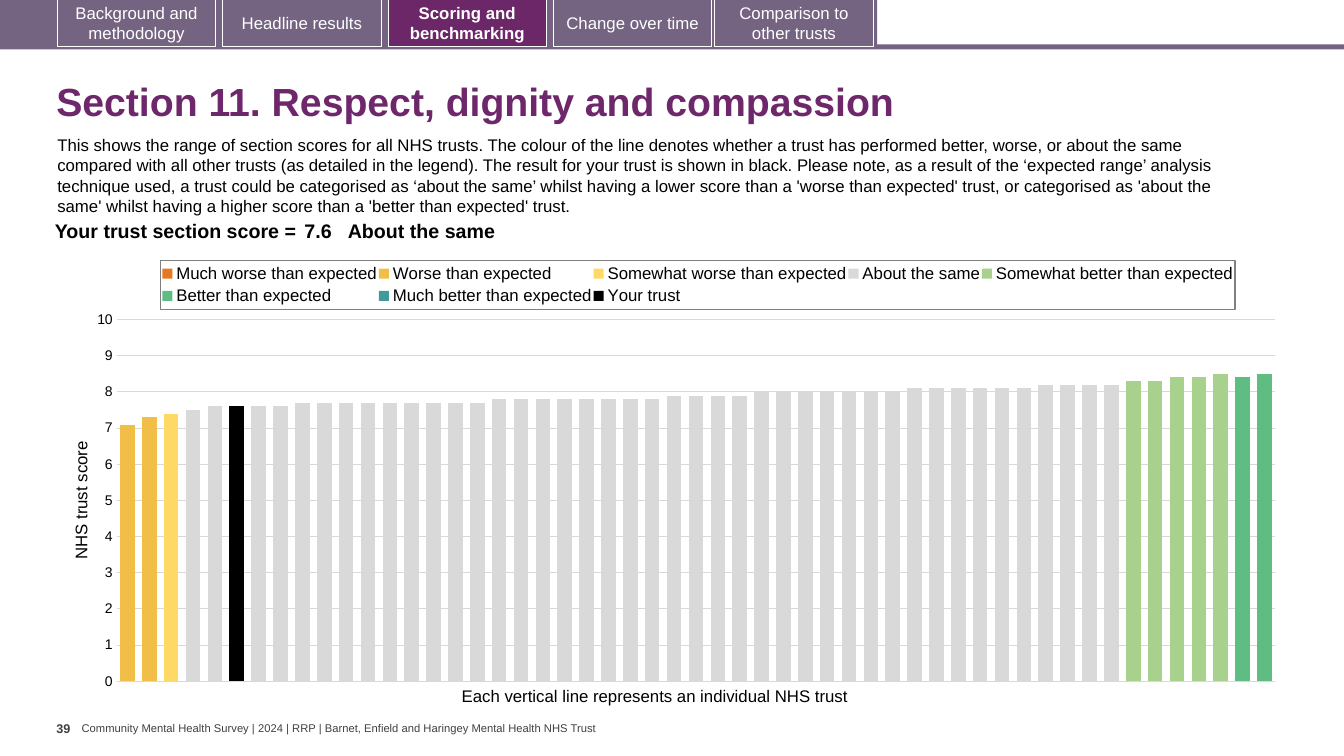
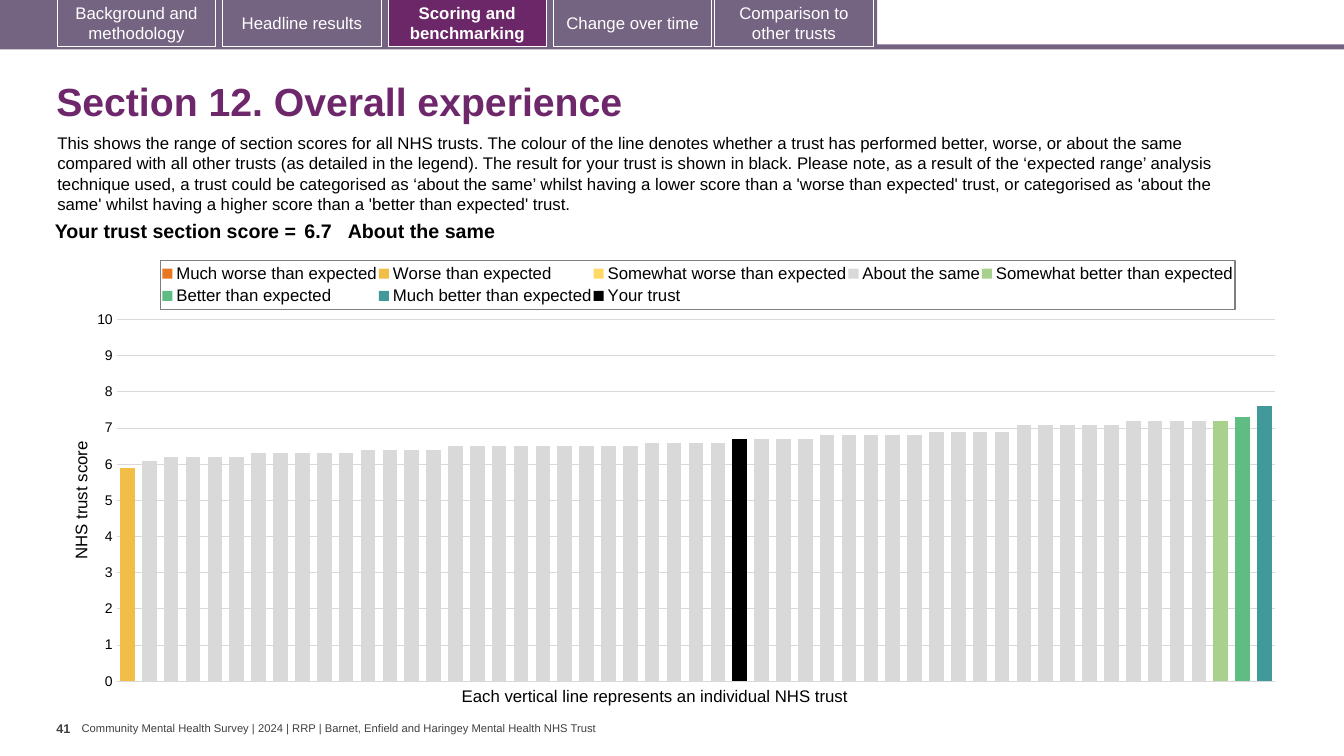
"""Build two section score slides, each with a bar chart of all trusts."""
import copy

import lxml.etree
import pptx
import pptx.chart.data
import pptx.dml.color
import pptx.enum.chart
import pptx.enum.shapes
import pptx.enum.text
import pptx.oxml
import pptx.oxml.ns
import pptx.util

Inches, Pt, qn = pptx.util.Inches, pptx.util.Pt, pptx.oxml.ns.qn
RGB = pptx.dml.color.RGBColor.from_string
XL = pptx.enum.chart
ALIGN, ANCHOR = pptx.enum.text.PP_ALIGN, pptx.enum.text.MSO_ANCHOR
RECT = pptx.enum.shapes.MSO_SHAPE.RECTANGLE

COLORS = {"band": "756382", "active": "6B2768", "title": "6D276A", "white": "FFFFFF",
          "black": "000000", "footer": "404040", "grid": "D9D9D9", "border": "7F7F7F"}
BANDS = {"Much worse than expected": "E87722", "Worse than expected": "F1BE48",
         "Somewhat worse than expected": "FFD966", "About the same": "D9D9D9",
         "Somewhat better than expected": "A9D18E", "Better than expected": "5FBD83",
         "Much better than expected": "419999"}
OWN = "Your trust"

TITLE = {"size": Pt(28), "bold": True, "color": "title"}
BODY = {"size": Pt(12), "bold": False, "color": "black"}
SCORE = {"size": Pt(14), "bold": True, "color": "black"}
TICKS = {"size": Pt(10), "bold": False, "color": "black"}
PAGE = {"size": Pt(9), "bold": True, "color": "footer"}
FOOTER = {"size": Pt(8), "bold": False, "color": "footer"}
TAB = {"size": Pt(12), "bold": False, "color": "white"}

TABS = [(0.57, "Background and methodology"), (2.21, "Headline results"),
        (3.85, "Scoring and benchmarking"), (5.49, "Change over time"),
        (7.09, "Comparison to other trusts")]
ACTIVE = "Scoring and benchmarking"
FOOTER_TEXT = ("Community Mental Health Survey | 2024 | RRP | "
               "Barnet, Enfield and Haringey Mental Health NHS Trust")
INTRO = (
    "This shows the range of section scores for all NHS trusts. The colour of the line denotes "
    "whether a trust has performed better, worse, or about the same compared with all other trusts "
    "(as detailed in the legend). The result for your trust is shown in black. Please note, as a "
    "result of the ‘expected range’ analysis technique used, a trust could be categorised as "
    "‘about the same’ whilst having a lower score than a 'worse than expected' trust, or "
    "categorised as 'about the same' whilst having a higher score than a 'better than expected' "
    "trust.")

SLIDES = [
    {"title": "Section 11. Respect, dignity and compassion", "page": "39", "intro_top": 1.29,
     "own": 5, "band_sizes": [0, 2, 1, 43, 5, 2, 0],
     "scores": [(7.1, 1), (7.3, 1), (7.4, 1), (7.5, 1), (7.6, 4), (7.7, 9), (7.8, 8), (7.9, 4),
                (8, 7), (8.1, 6), (8.2, 4), (8.3, 2), (8.4, 2), (8.5, 1), (8.4, 1), (8.5, 1)]},
    {"title": "Section 12. Overall experience", "page": "41", "intro_top": 1.27,
     "own": 28, "band_sizes": [0, 1, 0, 49, 1, 1, 1],
     "scores": [(5.9, 1), (6.1, 1), (6.2, 4), (6.3, 5), (6.4, 4), (6.5, 9), (6.6, 4), (6.7, 4),
                (6.8, 5), (6.9, 4), (7.1, 5), (7.2, 5), (7.3, 1), (7.6, 1)]},
]


def style(font, values):
    font.name = "Arial"
    for key, value in values.items():
        if key == "color":
            font.color.rgb = RGB(COLORS[value])
        else:
            setattr(font, key, value)


def write(tf, text, values, **frame):
    for key, value in frame.items():
        setattr(tf, key, value)
    p = tf.paragraphs[0]
    r = p.add_run()
    r.text = text
    style(r.font, values)
    return p


prs = pptx.Presentation()
prs.slide_width, prs.slide_height = Inches(13.33), Inches(7.5)
no_inset = {"margin_left": 0, "margin_right": 0}

for data in SLIDES:
    s = prs.slides.add_slide(prs.slide_layouts[6])

    bars = [(0, 0.44, 13.33, 0.05, ""), (0, 0, 8.7, 0.47, "")]
    bars += [(left, -0.01, 1.57, 0.47, label) for left, label in TABS]
    for left, top, width, height, label in bars:
        sp = s.shapes.add_shape(RECT, Inches(left), Inches(top), Inches(width), Inches(height))
        sp.shadow.inherit = False
        sp.fill.solid()
        sp.fill.fore_color.rgb = RGB(COLORS["active" if label == ACTIVE else "band"])
        if label:
            sp.line.color.rgb = RGB(COLORS["white"])
            sp.line.width = Pt(0.75)
            p = write(sp.text_frame, label, {**TAB, "bold": label == ACTIVE},
                      vertical_anchor=ANCHOR.MIDDLE)
            p.alignment = ALIGN.CENTER
        else:
            sp.line.fill.background()

    texts = [
        (0.46, 0.67, 12.49, 0.72, data["title"], TITLE,
         {"word_wrap": True, "vertical_anchor": ANCHOR.MIDDLE}),
        (0.47, data["intro_top"], 12.13, 0.91, INTRO, BODY, {"word_wrap": True}),
        (4.48, 6.75, 4.11, 0.3, "Each vertical line represents an individual NHS trust", BODY,
         {"word_wrap": False}),
        (0.56, 7.1, 0.25, 0.4, data["page"], PAGE, {"word_wrap": False, **no_inset}),
        (0.81, 7.16, 5.17, 0.13, FOOTER_TEXT, FOOTER,
         {"word_wrap": False, "vertical_anchor": ANCHOR.MIDDLE, "margin_top": 0,
          "margin_bottom": 0, **no_inset}),
    ]
    for left, top, width, height, text, values, frame in texts:
        sp = s.shapes.add_textbox(Inches(left), Inches(top), Inches(width), Inches(height))
        p = write(sp.text_frame, text, values, **frame)
        if values is TITLE:
            p.line_spacing = 0.9

    scores = [score for score, count in data["scores"] for _ in range(count)]
    total = len(scores)
    cd = pptx.chart.data.CategoryChartData()
    cd.categories = [str(n + 1) for n in range(total)]
    start = 0
    for name, size in zip(BANDS, data["band_sizes"]):
        end = start + size
        cd.add_series(name, [v if start <= n < end else None for n, v in enumerate(scores)])
        start = end
    cd.add_series(OWN, [v if n == data["own"] else None for n, v in enumerate(scores)])
    chart = s.shapes.add_chart(XL.XL_CHART_TYPE.COLUMN_CLUSTERED, Inches(0.67), Inches(2.47),
                               Inches(12.15), Inches(4.44), cd).chart
    style(chart.font, TICKS)
    chart.has_title = False
    plot = chart.plots[0]
    plot.gap_width, plot.overlap, plot.vary_by_categories = 50, 100, False
    for series, color in zip(plot.series, [*BANDS.values(), COLORS["black"]]):
        series.format.fill.solid()
        series.format.fill.fore_color.rgb = RGB(color)

    chart.category_axis.visible = False
    axis = chart.value_axis
    axis_format = {"minimum_scale": 0, "maximum_scale": 10, "major_unit": 1,
                   "major_tick_mark": XL.XL_TICK_MARK.NONE,
                   "minor_tick_mark": XL.XL_TICK_MARK.NONE, "has_major_gridlines": True}
    for key, value in axis_format.items():
        setattr(axis, key, value)
    axis.format.line.fill.background()
    axis.major_gridlines.format.line.color.rgb = RGB(COLORS["grid"])
    axis.major_gridlines.format.line.width = Pt(0.75)
    style(axis.tick_labels.font, TICKS)
    axis.tick_labels.number_format = "0"
    axis.tick_labels.number_format_is_linked = False

    chart.has_legend = True
    legend = chart.legend
    legend.position = XL.XL_LEGEND_POSITION.TOP
    legend.include_in_layout = False
    style(legend.font, BODY)
    border = pptx.oxml.parse_xml(
        f'<c:spPr {pptx.oxml.ns.nsdecls("c", "a")}><a:ln w="9525"><a:solidFill>'
        f'<a:srgbClr val="{COLORS["border"]}"/></a:solidFill></a:ln></c:spPr>')
    legend._element.find(qn("c:overlay")).addnext(border)

    area = chart._chartSpace.find(".//" + qn("c:plotArea"))
    bar = area.find(qn("c:barChart"))
    own_bar = copy.deepcopy(bar)
    bar.addnext(own_bar)
    bar.remove(bar.findall(qn("c:ser"))[-1])
    for ser in own_bar.findall(qn("c:ser"))[:-1]:
        own_bar.remove(ser)
    right_axes = [copy.deepcopy(area.find(qn(tag))) for tag in ("c:valAx", "c:catAx")]
    area.find(qn("c:valAx")).addnext(right_axes[0])
    right_axes[0].addnext(right_axes[1])
    ids = {el.get("val"): str(1001 + n) for n, el in enumerate(bar.findall(qn("c:axId")))}
    for part in [own_bar, *right_axes]:
        for el in part.iter(qn("c:axId"), qn("c:crossAx")):
            el.set("val", ids[el.get("val")])
    right = right_axes[0]
    right.remove(right.find(qn("c:majorGridlines")))
    for tag, value in (("c:crosses", "max"), ("c:tickLblPos", "none"), ("c:majorTickMark", "out")):
        el = right.find(qn(tag))
        if el is not None:
            el.set("val", value)

    axis.has_title = True
    write(axis.axis_title.text_frame, "NHS trust score", BODY)
    axis.axis_title._element.find(".//" + qn("a:bodyPr")).set("rot", "-5400000")

    layouts = [(area, 0, True, (0.04, 0.158, 0.946, 0.808)),
               (legend._element, 1, False, (0.076, 0.025, 0.877, 0.11))]
    for parent, index, inner, box in layouts:
        for old in parent.findall(qn("c:layout")):
            parent.remove(old)
        layout = lxml.etree.Element(qn("c:layout"))
        manual = lxml.etree.SubElement(layout, qn("c:manualLayout"))
        settings = [("layoutTarget", "inner")] if inner else []
        settings += [("xMode", "edge"), ("yMode", "edge"), *zip("xywh", box)]
        for tag, value in settings:
            lxml.etree.SubElement(manual, qn("c:" + tag)).set("val", str(value))
        parent.insert(index, layout)

    table = s.shapes.add_table(1, 3, Inches(0.35), Inches(2.15), Inches(11.69), Inches(0.31)).table
    table.first_row = table.horz_banding = False
    cells = [(2.63, 0.04, "Your trust section score =", ALIGN.RIGHT),
             (0.47, 0.04, str(scores[data["own"]]), ALIGN.LEFT),
             (8.59, 0, "About the same", ALIGN.LEFT)]
    for n, (width, inset, text, align) in enumerate(cells):
        table.columns[n].width = Inches(width)
        cell = table.cell(0, n)
        cell.fill.background()
        cell.margin_left = cell.margin_right = Inches(inset)
        cell.margin_top = cell.margin_bottom = Inches(0.04)
        write(cell.text_frame, text, SCORE).alignment = align

prs.save("out.pptx")
